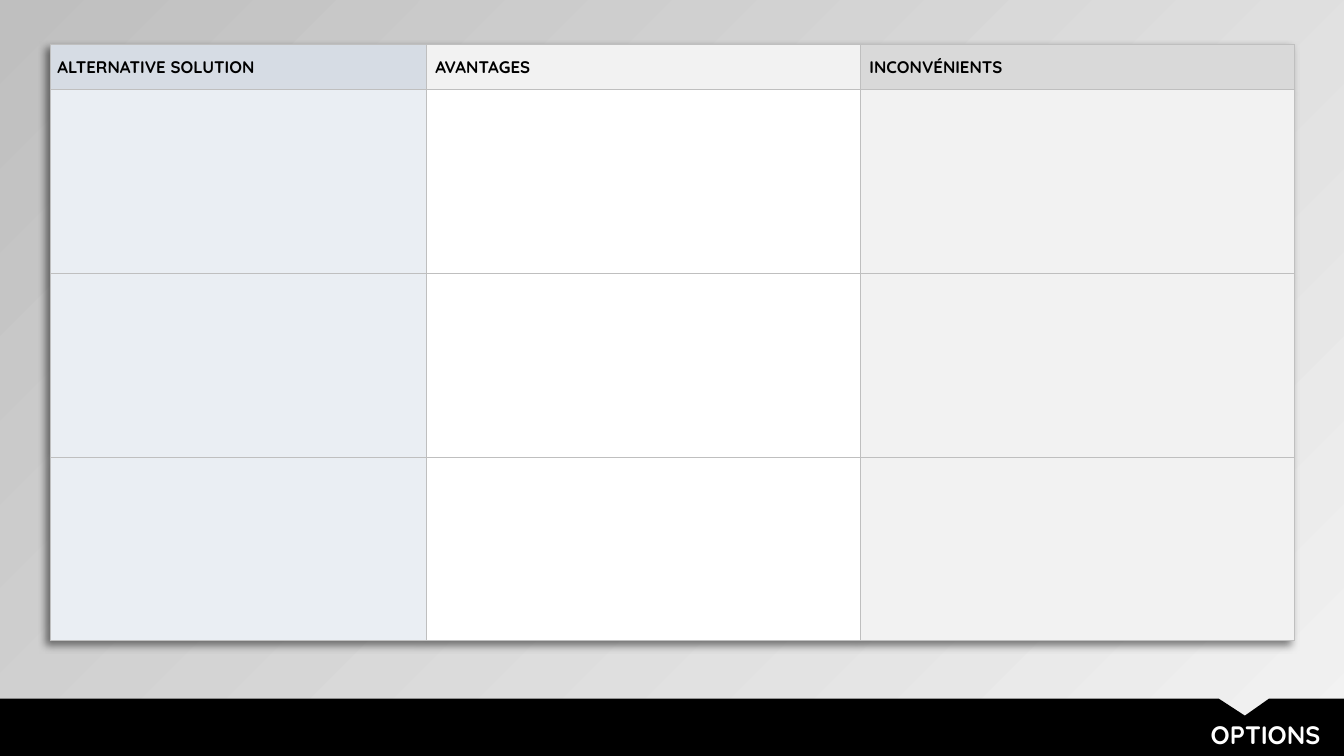
from dataclasses import dataclass

from lxml import etree
from pptx import Presentation
from pptx.dml.color import RGBColor
from pptx.enum import text as t
from pptx.oxml import ns
from pptx.util import Pt


@dataclass(frozen=True)
class Theme:
    font: str = "Quicksand"
    head: float = 12
    title: float = 18
    ink: str = "000000"
    paper: str = "FFFFFF"
    line: str = "BFBFBF"
    light: str = "F2F2F2"
    heads: tuple = ("D6DCE4", "F2F2F2", "D9D9D9")
    cells: tuple = ("EAEEF3", "FFFFFF", "F2F2F2")


THEME = Theme()
HEADS = ("ALTERNATIVE SOLUTION", "AVANTAGES", "INCONVÉNIENTS")
WIDTHS = (268.6, 310, 310)
HEIGHTS = (32.4, 131.2, 131.2, 131.2)
INSETS = ((5, 0, 5, 0), (6.5, 0.7, 0.7, 0), (6.5, 0.7, 0.7, 0))


def add(node, tag, **attrs):
    return etree.SubElement(node, ns.qn(tag), attrs)


def paint(fill, color):
    fill.solid()
    fill.fore_color.rgb = RGBColor.from_string(color)


def write(frame, words, size, color=THEME.ink, align=t.PP_ALIGN.LEFT, bold=True):
    para = frame.paragraphs[0]
    para.alignment = align
    run = para.add_run()
    run.text = words
    run.font.name = THEME.font
    run.font.size = Pt(size)
    run.font.bold = bold
    run.font.color.rgb = RGBColor.from_string(color)


def backdrop(slide):
    fill = slide.background.fill
    fill.gradient()
    fill.gradient_angle = 135
    for stop, color in zip(fill.gradient_stops, (THEME.light, THEME.line)):
        stop.color.rgb = RGBColor.from_string(color)


def border(cell):
    props = cell._tc.get_or_add_tcPr()
    for side in "LRTB":
        edge = add(props, f"a:ln{side}", w=str(Pt(0.5)))
        add(add(edge, "a:solidFill"), "a:srgbClr", val=THEME.line)


def shade(table):
    props = table._tbl.tblPr
    effect = add(props, "a:effectLst")
    props.insert(0, effect)
    cast = add(effect, "a:outerShdw", blurRad=str(Pt(6)), dist=str(Pt(4)),
               dir="8100000", algn="tr", rotWithShape="0")
    add(add(cast, "a:srgbClr", val=THEME.ink), "a:alpha", val="50000")


def grid(slide):
    frame = slide.shapes.add_table(len(HEIGHTS), len(WIDTHS), Pt(36), Pt(31.7),
                                   Pt(sum(WIDTHS)), Pt(sum(HEIGHTS)))
    table = frame.table
    table.first_row = table.horz_banding = False
    shade(table)
    for col, width in zip(table.columns, WIDTHS):
        col.width = Pt(width)
    for r, height in enumerate(HEIGHTS):
        table.rows[r].height = Pt(height)
        fills = THEME.cells if r else THEME.heads
        for c, color in enumerate(fills):
            cell = table.cell(r, c)
            border(cell)
            paint(cell.fill, color)
    for c, words in enumerate(HEADS):
        cell = table.cell(0, c)
        cell.vertical_anchor = t.MSO_ANCHOR.MIDDLE
        (cell.margin_left, cell.margin_top,
         cell.margin_right, cell.margin_bottom) = map(Pt, INSETS[c])
        write(cell.text_frame, words, THEME.head)


def footer(slide):
    top = 499
    pen = slide.shapes.build_freeform(Pt(0), Pt(top))
    points = ((870.5, top), (889.2, 511.2), (906.5, top),
              (960, top), (960, 540), (0, 540))
    pen.add_line_segments([(Pt(x), Pt(y)) for x, y in points], close=True)
    band = pen.convert_to_shape()
    band.shadow.inherit = False
    paint(band.fill, THEME.ink)
    band.line.fill.background()
    return band


def heading(slide, band):
    title = slide.shapes.title
    title.left, title.top = Pt(298), Pt(510)
    title.width, title.height = Pt(652.4), Pt(28.8)
    frame = title.text_frame
    frame.word_wrap = True
    frame.auto_size = t.MSO_AUTO_SIZE.SHAPE_TO_FIT_TEXT
    frame.vertical_anchor = t.MSO_ANCHOR.TOP
    write(frame, "OPTIONS", THEME.title, color=THEME.paper,
          align=t.PP_ALIGN.RIGHT)
    band.element.addnext(title.element)


def main():
    deck = Presentation()
    deck.slide_width, deck.slide_height = Pt(960), Pt(540)
    slide = deck.slides.add_slide(deck.slide_layouts[5])
    backdrop(slide)
    grid(slide)
    heading(slide, footer(slide))
    deck.save("out.pptx")


if __name__ == "__main__":
    main()
